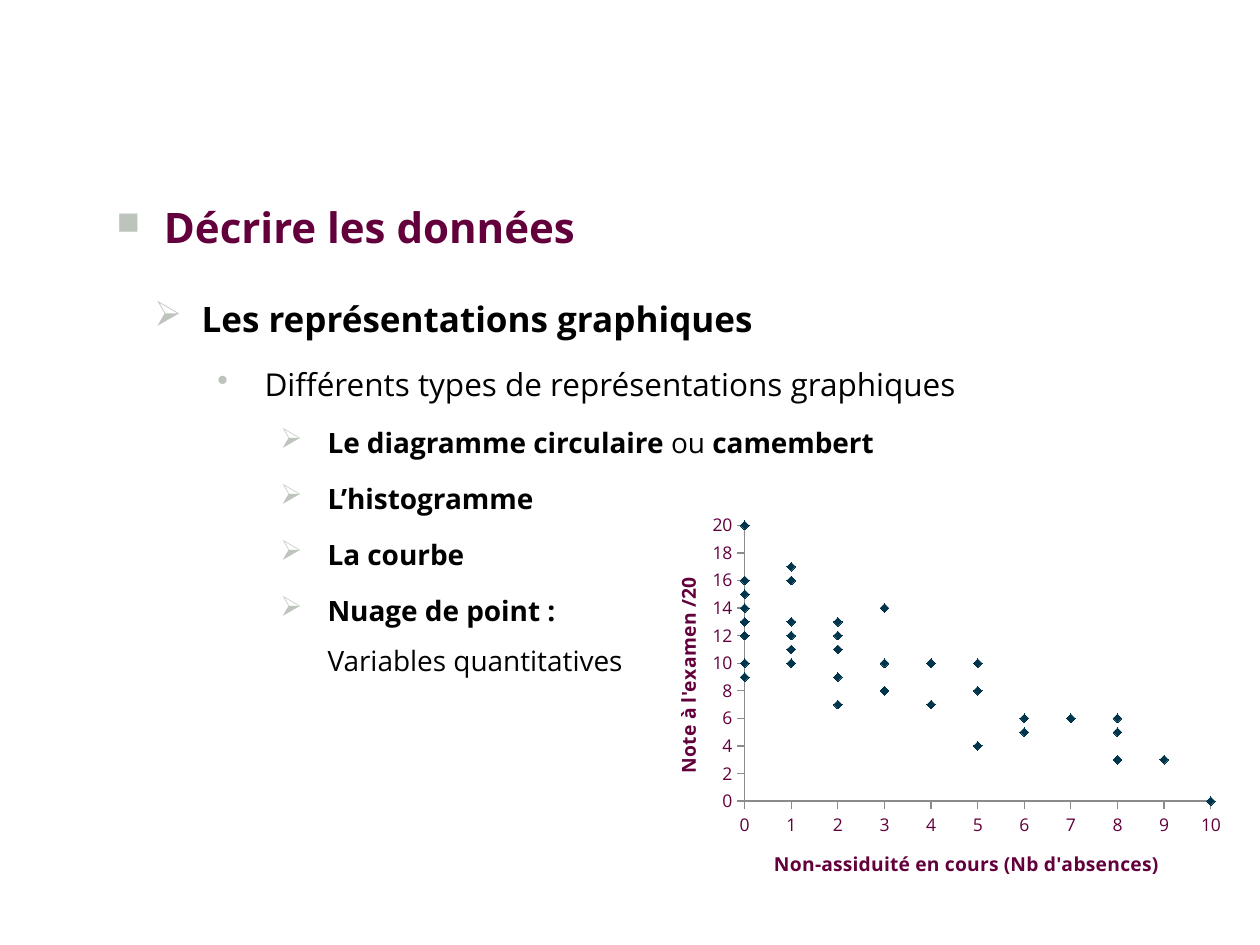
from dataclasses import dataclass

from lxml.etree import SubElement as Sub
from pptx import Presentation
from pptx.chart.data import XyChartData
from pptx.dml.color import RGBColor as Rgb
from pptx.enum.chart import XL_CHART_TYPE as Kind
from pptx.enum.chart import XL_MARKER_STYLE as Mark
from pptx.enum.chart import XL_TICK_MARK as Tick
from pptx.oxml import parse_xml
from pptx.oxml.ns import nsdecls, qn
from pptx.util import Pt


@dataclass(frozen=True)
class Theme:
    font: str = "Open Sans"
    plum: Rgb = Rgb(0x63, 0x00, 0x3C)
    black: Rgb = Rgb(0, 0, 0)
    navy: Rgb = Rgb(0x00, 0x35, 0x4B)
    gray: Rgb = Rgb(0x8B, 0x8B, 0x8B)
    bullet: str = "BDC4BC"
    head: int = 24
    sub: int = 20
    body: int = 18
    item: int = 16
    tick: int = 10
    label: int = 11


@dataclass(frozen=True)
class Level:
    mark: str
    scale: int
    left: float
    size: int
    color: Rgb
    gap: float = 0
    pitch: float = 1.0


T = Theme()
HEAD = Level("■", 75, 42, T.head, T.plum)
SUB = Level("➢", 100, 63.5, T.sub, T.black, 26)
BODY = Level("•", 100, 99.5, T.body, T.black, 14.7)
ITEM = Level("➢", 100, 135.5, T.item, T.black, 3.2, 1.5)
HANG = 27
BREAK = "\v"

# Each line is a level and its parts: text and bold.
LINES = [
    (HEAD, [("Décrire les données", True)]),
    (SUB, [("Les représentations graphiques", True)]),
    (BODY, [("Différents types de représentations graphiques", False)]),
    (ITEM, [("Le diagramme circulaire ", True), ("ou ", False),
            ("camembert", True)]),
    (ITEM, [("L’histogramme", True)]),
    (ITEM, [("La courbe", True)]),
    (ITEM, [("Nuage de point :", True), (BREAK, False),
            ("Variables quantitatives", False)]),
]

# Exam marks for each number of absences.
MARKS = {
    0: [9, 20, 16, 15, 14, 13, 12, 10],
    1: [11, 10, 17, 12, 13, 16],
    2: [13, 12, 11, 9, 7],
    3: [10, 8, 14],
    4: [10, 7],
    5: [4, 10, 8],
    6: [5, 6],
    7: [6],
    8: [6, 5, 3],
    9: [3],
    10: [0],
}


def style(font, size, color, bold=False):
    font.name, font.size, font.bold = T.font, Pt(size), bold
    font.color.rgb = color


def add_bullet(para, level):
    props = para._p.get_or_add_pPr()
    props.set("marL", str(Pt(level.left)))
    props.set("indent", str(-Pt(HANG)))
    Sub(Sub(props, qn("a:buClr")), qn("a:srgbClr"), val=T.bullet)
    Sub(props, qn("a:buSzPct"), val=str(level.scale * 1000))
    Sub(props, qn("a:buChar"), char=level.mark)


def add_outline(slide, x, y, w, h):
    frame = slide.shapes.add_textbox(Pt(x), Pt(y), Pt(w), Pt(h)).text_frame
    frame.word_wrap = True
    for i, (level, parts) in enumerate(LINES):
        para = frame.add_paragraph() if i else frame.paragraphs[0]
        add_bullet(para, level)
        para.space_before = Pt(level.gap)
        para.line_spacing = level.pitch
        for text, bold in parts:
            if text == BREAK:
                para.add_line_break()
                continue
            run = para.add_run()
            run.text = text
            style(run.font, level.size, level.color, bold)


def set_axis(axis, title, top, step):
    axis.minimum_scale, axis.maximum_scale = 0, top
    axis.major_unit = step
    axis.has_major_gridlines = False
    axis.major_tick_mark, axis.minor_tick_mark = Tick.OUTSIDE, Tick.NONE
    axis.format.line.color.rgb = T.gray
    axis.format.line.width = Pt(0.75)
    style(axis.tick_labels.font, T.tick, T.plum)
    frame = axis.axis_title.text_frame
    frame.text = title
    style(frame.paragraphs[0].runs[0].font, T.label, T.plum, True)


def set_layout(chart, x, y, w, h):
    """Fix the inner plot area as shares of the chart and turn the y title."""
    plot = chart._chartSpace.find(".//" + qn("c:plotArea"))
    for old in plot.findall(qn("c:layout")):
        plot.remove(old)
    sizes = "".join(f'<c:{tag} val="{val}"/>' for tag, val in
                    (("x", x), ("y", y), ("w", w), ("h", h)))
    plot.insert(0, parse_xml(
        f'<c:layout {nsdecls("c")}><c:manualLayout>'
        '<c:layoutTarget val="inner"/><c:xMode val="edge"/>'
        f'<c:yMode val="edge"/>{sizes}</c:manualLayout></c:layout>'))
    body = plot.findall(qn("c:valAx"))[1].find(
        qn("c:title")).find(".//" + qn("a:bodyPr"))
    body.set("rot", "-5400000")
    body.set("vert", "horz")


def add_scatter(slide, x, y, w, h):
    data = XyChartData()
    points = data.add_series("Series 1")
    for absent, marks in MARKS.items():
        for mark in marks:
            points.add_data_point(absent, mark)
    chart = slide.shapes.add_chart(
        Kind.XY_SCATTER, Pt(x), Pt(y), Pt(w), Pt(h), data).chart
    chart.has_legend = chart.has_title = False
    style(chart.font, T.tick, T.plum)
    set_axis(chart.category_axis, "Non-assiduité en cours (Nb d'absences)",
             10, 1)
    set_axis(chart.value_axis, "Note à l'examen /20", 20, 2)
    set_layout(chart, 0.12, 0.05, 0.74, 0.73)
    plot = chart.plots[0]
    plot.vary_by_categories = False
    series = plot.series[0]
    series.format.line.fill.background()
    marker = series.marker
    marker.style, marker.size = Mark.DIAMOND, 5
    marker.format.fill.solid()
    marker.format.fill.fore_color.rgb = T.navy
    marker.format.line.color.rgb = T.navy


def main():
    deck = Presentation()
    deck.slide_width, deck.slide_height = Pt(720), Pt(540)
    slide = deck.slides.add_slide(deck.slide_layouts[6])
    add_outline(slide, 44.6, 111.6, 649.4, 376.6)
    add_scatter(slide, 382.3, 289.4, 360, 216)
    deck.save("out.pptx")


if __name__ == "__main__":
    main()
